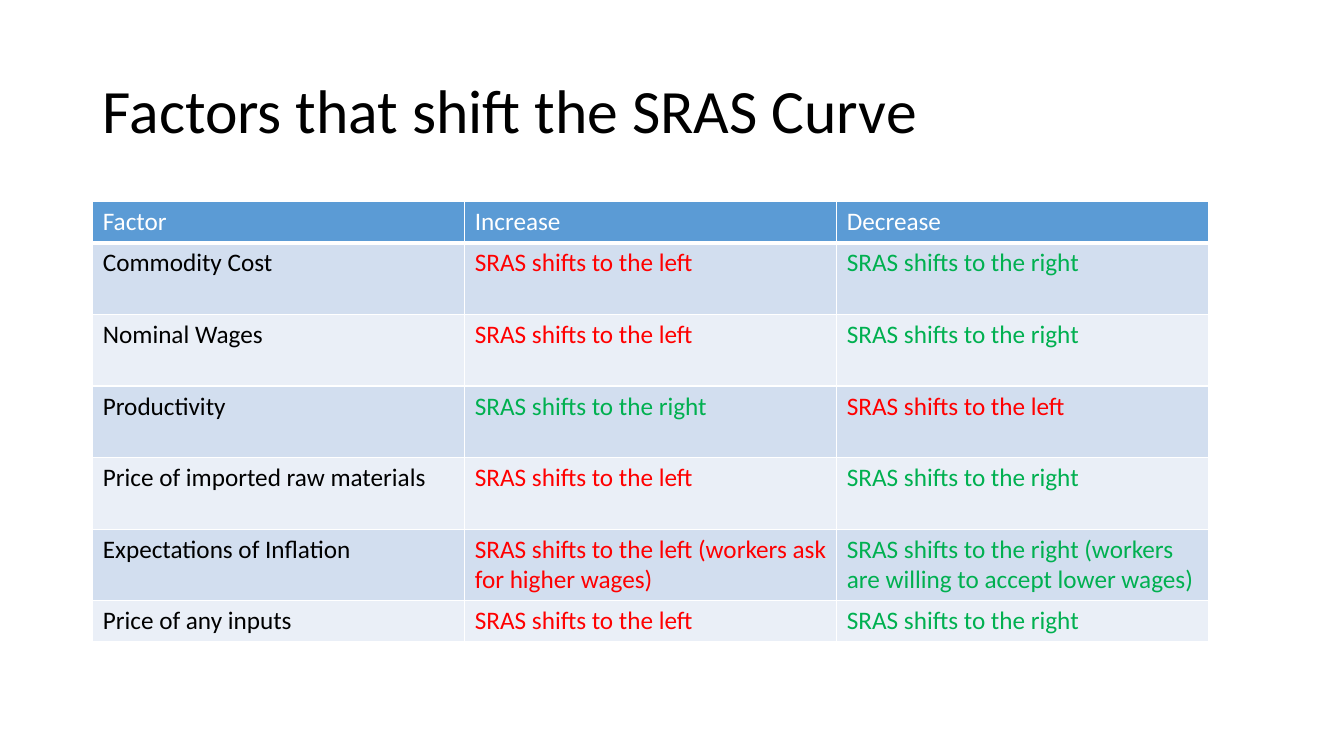
from dataclasses import dataclass

from lxml import etree
from pptx import Presentation
from pptx.dml.color import RGBColor
from pptx.enum.text import MSO_ANCHOR
from pptx.oxml.ns import qn
from pptx.util import Inches, Pt

MIDDLE = MSO_ANCHOR.MIDDLE
TITLE_ONLY = 5


@dataclass(frozen=True)
class Theme:
    font: str = "Calibri"
    title_size: int = 44
    body_size: int = 18
    text: str = "000000"
    light: str = "FFFFFF"
    header: str = "5B9BD5"
    bands: tuple = ("D2DEEF", "EAEFF7")
    left_shift: str = "FF0000"
    right_shift: str = "00B050"
    rule: float = 1
    header_rule: float = 3


THEME = Theme()
LEFT = "SRAS shifts to the left"
RIGHT = "SRAS shifts to the right"
HEADINGS = ("Factor", "Increase", "Decrease")
FACTORS = (
    ("Commodity Cost", LEFT, RIGHT),
    ("Nominal Wages", LEFT, RIGHT),
    ("Productivity", RIGHT, LEFT),
    ("Price of imported raw materials", LEFT, RIGHT),
    (
        "Expectations of Inflation",
        LEFT + " (workers ask for higher wages)",
        RIGHT + " (workers are willing to accept lower wages)",
    ),
    ("Price of any inputs", LEFT, RIGHT),
)
COLUMN_WIDTH = 3.69
SHORT_ROW = 0.41
TALL_ROW = 0.71


def add_run(paragraph, wording, size, color):
    run = paragraph.add_run()
    run.text = wording
    run.font.name = THEME.font
    run.font.size = Pt(size)
    run.font.bold = False
    run.font.color.rgb = RGBColor.from_string(color)


def add_title(slide, wording):
    title = slide.shapes.title
    title.left, title.top = Inches(0.92), Inches(0.4)
    title.width, title.height = Inches(11.5), Inches(1.45)
    frame = title.text_frame
    frame.word_wrap = True
    frame.vertical_anchor = MIDDLE
    heading = frame.paragraphs[0]
    heading.alignment = 1
    heading.line_spacing = 0.9
    add_run(heading, wording, THEME.title_size, THEME.text)


def set_borders(cell, bottom_width):
    properties = cell._tc.get_or_add_tcPr()
    for side in ("L", "R", "T", "B"):
        width = bottom_width if side == "B" else THEME.rule
        line = etree.SubElement(properties, qn(f"a:ln{side}"), w=str(Pt(width)))
        fill = etree.SubElement(line, qn("a:solidFill"))
        etree.SubElement(fill, qn("a:srgbClr"), val=THEME.light)


def fill_cell(cell, wording, color, background, bottom_width):
    set_borders(cell, bottom_width)
    cell.fill.solid()
    cell.fill.fore_color.rgb = RGBColor.from_string(background)
    add_run(cell.text_frame.paragraphs[0], wording, THEME.body_size, color)


def shift_color(wording):
    if wording.startswith(LEFT):
        return THEME.left_shift
    if wording.startswith(RIGHT):
        return THEME.right_shift
    return THEME.text


def add_factor_table(slide):
    heights = [SHORT_ROW] + [TALL_ROW] * (len(FACTORS) - 1) + [SHORT_ROW]
    table = slide.shapes.add_table(
        len(heights), len(HEADINGS), Inches(0.92), Inches(2),
        Inches(COLUMN_WIDTH * len(HEADINGS)), Inches(sum(heights)),
    ).table
    for column in table.columns:
        column.width = Inches(COLUMN_WIDTH)
    for row, height in zip(table.rows, heights):
        row.height = Inches(height)
    for cell, heading in zip(table.rows[0].cells, HEADINGS):
        fill_cell(cell, heading, THEME.light, THEME.header, THEME.header_rule)
    for index, factor in enumerate(FACTORS):
        band = THEME.bands[index % len(THEME.bands)]
        for cell, wording in zip(table.rows[index + 1].cells, factor):
            fill_cell(cell, wording, shift_color(wording), band, THEME.rule)


def main():
    presentation = Presentation()
    presentation.slide_width = Inches(13.33)
    presentation.slide_height = Inches(7.5)
    slide = presentation.slides.add_slide(presentation.slide_layouts[TITLE_ONLY])
    add_title(slide, "Factors that shift the SRAS Curve")
    add_factor_table(slide)
    presentation.save("out.pptx")


if __name__ == "__main__":
    main()
